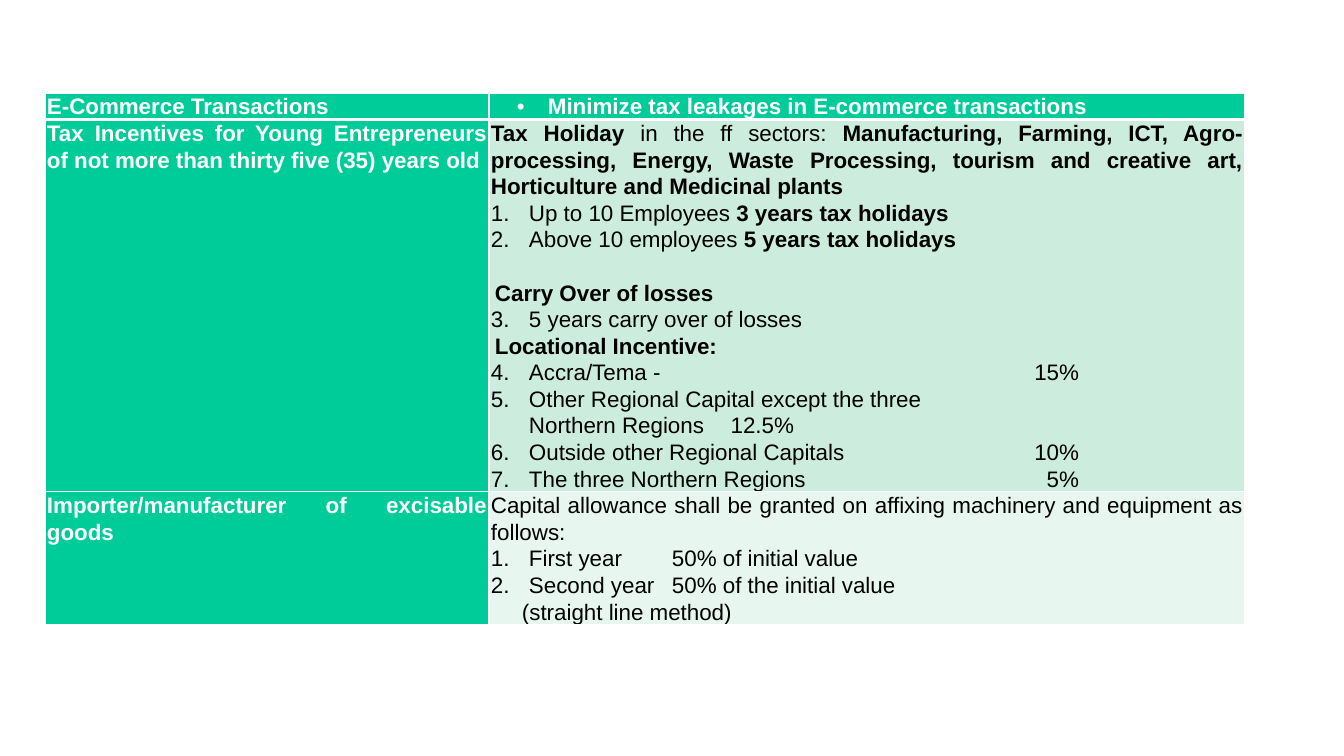
from lxml.etree import SubElement
from pptx import Presentation
from pptx.dml.color import RGBColor
from pptx.enum.text import PP_ALIGN
from pptx.oxml.ns import qn
from pptx.util import Pt

COLOURS = {"green": "00CC99", "mint": "CCECDE", "pale": "E7F6EF",
           "white": "FFFFFF", "black": "000000"}
PX = 914400 / 100.8
LEFT, TOP = 45, 93
COLUMN_WIDTHS = [444, 756]
ROW_HEIGHTS = [26, 361, 128]
SIDE_INSET = 2
RATE_TAB = ("r", 588)
YEAR_TAB = ("l", 181)

STYLES = {
    "plain": {},
    "bullet": {"left": 57, "hang": 31, "mark": ("buChar", "char", "•"), "align": PP_ALIGN.LEFT},
    "number": {"left": 38, "hang": 38, "mark": ("buAutoNum", "type", "arabicPeriod")},
    "rate": {"left": 38, "hang": 38, "mark": ("buAutoNum", "type", "arabicPeriod"), "tab": RATE_TAB},
    "rate_more": {"left": 38, "tab": RATE_TAB},
    "year": {"left": 38, "hang": 38, "mark": ("buAutoNum", "type", "arabicPeriod"), "tab": YEAR_TAB},
    "heading": {"left": 4},
    "spaced_heading": {"left": 4, "before": 19},
    "note": {"left": 31},
}

ROWS = [
    ("green", [("plain", [("E-Commerce Transactions", True)])],
     [("bullet", [("Minimize tax leakages in E-commerce transactions", True)])]),
    ("mint", [("plain", [("Tax Incentives for Young Entrepreneurs of not more than "
                          "thirty five (35) years old", True)])],
     [("plain", [("Tax Holiday ", True), ("in the ff sectors: ", False),
                 ("Manufacturing, Farming, ICT, Agro-processing, Energy, Waste Processing, "
                  "tourism and creative art, Horticulture and Medicinal plants", True)]),
      ("number", [("Up to 10 Employees ", False), ("3 years tax holidays", True)]),
      ("number", [("Above 10 employees ", False), ("5 years tax holidays", True)]),
      ("spaced_heading", [("Carry Over of losses", True)]),
      ("number", [("5 years carry over of losses", False)]),
      ("heading", [("Locational Incentive:", True)]),
      ("rate", [("Accra/Tema -\t15%", False)]),
      ("number", [("Other Regional Capital except the three", False)]),
      ("rate_more", [("Northern Regions\t12.5%", False)]),
      ("rate", [("Outside other Regional Capitals\t10%", False)]),
      ("rate", [("The three Northern Regions\t5%", False)])]),
    ("pale", [("plain", [("Importer/manufacturer of excisable goods", True)])],
     [("plain", [("Capital allowance shall be granted on affixing machinery and "
                  "equipment as follows:", False)]),
      ("year", [("First year\t50% of initial value", False)]),
      ("year", [("Second year\t50% of the initial value", False)]),
      ("note", [("(straight line method)", False)])]),
]


def emu(px):
    return round(px * PX)


def add_colour(parent, colour):
    SubElement(parent, qn("a:srgbClr"), val=COLOURS[colour])


def format_paragraph(paragraph, style, ink):
    properties = paragraph._p.get_or_add_pPr()
    left, hang = style.get("left", 0), style.get("hang", 0)
    properties.set("marL", str(emu(left)))
    properties.set("indent", str(-emu(hang)))
    if "mark" in style:
        tag, key, value = style["mark"]
        add_colour(SubElement(properties, qn("a:buClr")), ink)
        SubElement(properties, qn("a:buFont"), typeface="Arial")
        SubElement(properties, qn("a:" + tag), {key: value})
    else:
        SubElement(properties, qn("a:buNone"))
    if "tab" in style:
        align, position = style["tab"]
        stops = SubElement(properties, qn("a:tabLst"))
        SubElement(stops, qn("a:tab"), pos=str(emu(position)), algn=align)
    paragraph.alignment = style.get("align", PP_ALIGN.JUSTIFY)
    paragraph.line_spacing = 1.07
    if "before" in style:
        paragraph.space_before = Pt(style["before"])


def write_cell(cell, paragraphs, ink):
    cell.margin_left = cell.margin_right = emu(SIDE_INSET)
    cell.margin_top = cell.margin_bottom = 0
    frame = cell.text_frame
    for index, (style, runs) in enumerate(paragraphs):
        paragraph = frame.add_paragraph() if index else frame.paragraphs[0]
        format_paragraph(paragraph, STYLES[style], ink)
        for words, bold in runs:
            run = paragraph.add_run()
            run.text = words
            run.font.name = "Arial"
            run.font.size = Pt(16)
            run.font.bold = bold
            run.font.color.rgb = RGBColor.from_string(COLOURS[ink])


def paint_cell(cell, fill, row):
    properties = cell._tc.get_or_add_tcPr()
    widths = {"lnL": 1, "lnR": 1, "lnT": 3 if row == 1 else 1, "lnB": 3 if row == 0 else 1}
    for side, width in widths.items():
        border = SubElement(properties, qn("a:" + side), w=str(Pt(width)))
        add_colour(SubElement(border, qn("a:solidFill")), "white")
    cell.fill.solid()
    cell.fill.fore_color.rgb = RGBColor.from_string(COLOURS[fill])


def main():
    deck = Presentation()
    deck.slide_width, deck.slide_height = emu(1344), emu(756)
    slide = deck.slides.add_slide(deck.slide_layouts[6])
    incentives = slide.shapes.add_table(
        len(ROWS), len(COLUMN_WIDTHS), emu(LEFT), emu(TOP),
        emu(sum(COLUMN_WIDTHS)), emu(sum(ROW_HEIGHTS))).table
    for column, width in zip(incentives.columns, COLUMN_WIDTHS):
        column.width = emu(width)
    for row, (detail_fill, topic, details) in enumerate(ROWS):
        incentives.rows[row].height = emu(ROW_HEIGHTS[row])
        detail_ink = "white" if row == 0 else "black"
        parts = [(topic, "green", "white"), (details, detail_fill, detail_ink)]
        for column, (paragraphs, fill, ink) in enumerate(parts):
            cell = incentives.cell(row, column)
            write_cell(cell, paragraphs, ink)
            paint_cell(cell, fill, row)
    deck.save("out.pptx")


if __name__ == "__main__":
    main()
